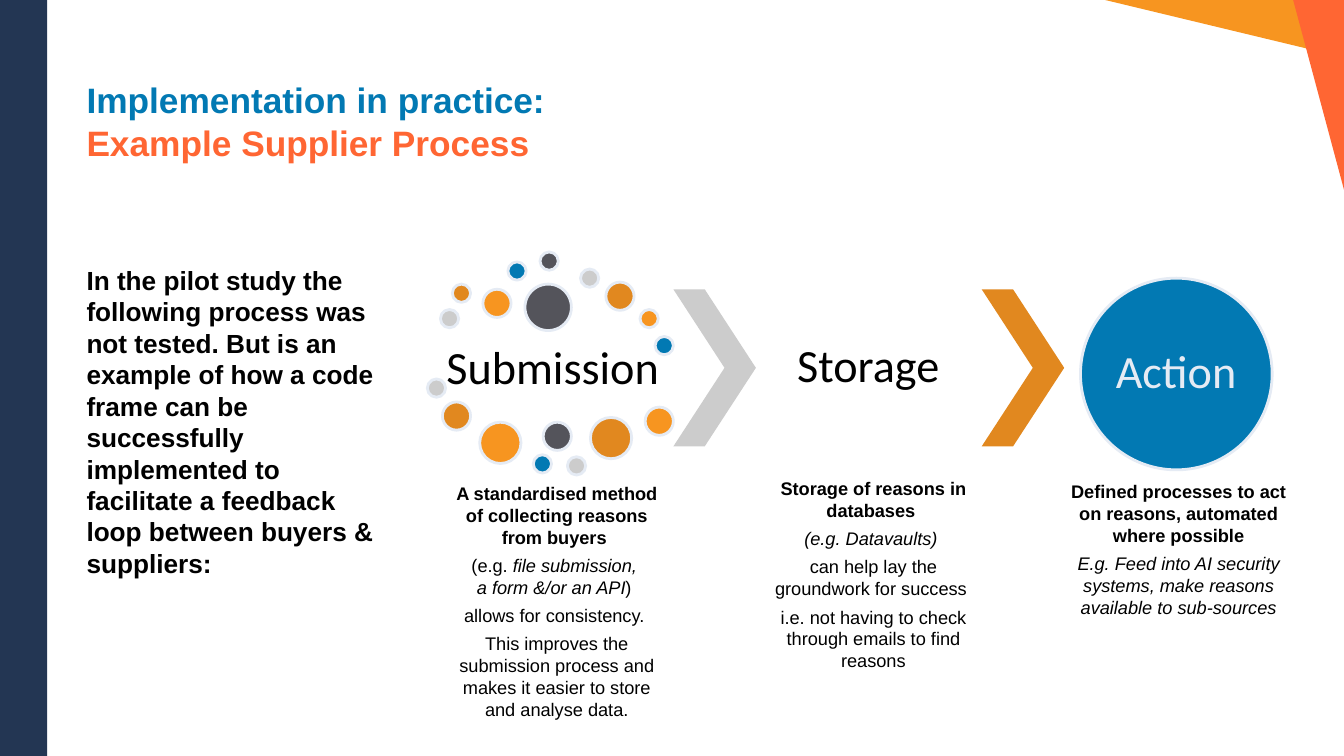
"""Build the example supplier process slide."""
from dataclasses import dataclass
from itertools import cycle

import pptx
import pptx.dml.color
import pptx.enum.shapes
import pptx.enum.text
import pptx.oxml
import pptx.oxml.ns
import pptx.shapes.autoshape
import pptx.slide
import pptx.text.text
import pptx.util

Preset = pptx.enum.shapes.MSO_SHAPE
Align = pptx.enum.text.PP_ALIGN
Anchor = pptx.enum.text.MSO_ANCHOR
Cm = pptx.util.Cm
Pt = pptx.util.Pt


@dataclass(frozen=True)
class Theme:
    navy: str = "233653"
    blue: str = "0279B3"
    coral: str = "FF6633"
    orange: str = "F79520"
    amber: str = "E1881F"
    grey: str = "CCCCCC"
    dark: str = "54545B"
    pale: str = "E5EBF4"
    black: str = "000000"
    text_font: str = "Arial"
    stage_font: str = "Calibri"
    title_size: float = 25.2
    body_size: float = 18.7
    stage_size: float = 33
    detail_size: float = 13
    detail_gap: float = 4.55
    outline: float = 2


THEME = Theme()


@dataclass(frozen=True)
class Frame:
    left: float
    top: float
    width: float
    height: float


@dataclass(frozen=True)
class Figure:
    preset: Preset
    frame: Frame
    fill: str
    outlined: bool = False
    rotation: float = 0
    adjustment: float | None = None


@dataclass(frozen=True)
class Span:
    text: str
    bold: bool = False
    italic: bool = False


@dataclass(frozen=True)
class Stage:
    name: str
    name_frame: Frame
    name_colour: str
    name_inset: float
    detail_frame: Frame
    detail_bottom: float
    details: tuple[tuple[Span, ...], ...]


BACKDROP = (
    Figure(Preset.RIGHT_TRIANGLE, Frame(26.19, -1.37, 6.4, 3.48), THEME.orange, rotation=165),
    Figure(Preset.ISOSCELES_TRIANGLE, Frame(30.2, 0.2, 8.99, 3.15), THEME.coral, rotation=75),
    Figure(Preset.RECTANGLE, Frame(0, 0, 1.19, 19.05), THEME.navy),
)

SMALL, MEDIUM, LARGE, LARGEST = 0.46, 0.71, 1.04, 1.17
DOTS = (
    (11.1, 7.8, SMALL), (11.4, 7.16, SMALL), (12.17, 7.29, MEDIUM),
    (12.8, 6.6, SMALL), (13.61, 6.35, SMALL), (14.63, 6.78, SMALL),
    (15.27, 7.11, MEDIUM), (16.13, 7.8, SMALL), (16.51, 8.48, SMALL),
    (13.23, 7.16, LARGEST), (10.77, 9.55, SMALL), (11.15, 10.13, MEDIUM),
    (12.09, 10.64, LARGE), (13.44, 11.46, SMALL), (13.69, 10.64, MEDIUM),
    (14.3, 11.51, SMALL), (14.88, 10.52, LARGE), (16.26, 10.26, MEDIUM),
)
DOT_COLOURS = (THEME.grey, THEME.amber, THEME.orange, THEME.blue, THEME.dark)

PROCESS = tuple(
    Figure(Preset.OVAL, Frame(left, top, size, size), colour, outlined=True)
    for (left, top, size), colour in zip(DOTS, cycle(DOT_COLOURS))
) + (
    Figure(Preset.CHEVRON, Frame(16.97, 7.29, 2.08, 3.96), THEME.grey, adjustment=0.62),
    Figure(Preset.CHEVRON, Frame(24.74, 7.29, 2.08, 3.96), THEME.amber, adjustment=0.62),
    Figure(Preset.OVAL, Frame(27.23, 7.01, 4.83, 4.83), THEME.blue, outlined=True),
)

STAGES = (
    Stage("Submission", Frame(11.1, 8.36, 5.66, 1.88), THEME.black, 0.13,
          Frame(11.2, 13.39, 5.66, 3.51), 0.05, (
              (Span("A standardised method of collecting reasons from buyers ", bold=True),),
              (Span("(e.g. "), Span("file submission, ", italic=True), Span("\v"),
               Span("a form &/or an API", italic=True), Span(") ")),
              (Span("allows for consistency. "),),
              (Span("This improves the submission process and makes it easier "
                    "to store and analyse data."),))),
    Stage("Storage", Frame(19.05, 7.29, 5.66, 3.96), THEME.black, 0.13,
          Frame(19.18, 13.06, 5.66, 3.51), 0.73, (
              (Span("Storage of reasons in databases ", bold=True),),
              (Span("(e.g. Datavaults) ", italic=True),),
              (Span("can help lay the groundwork for success "),),
              (Span("i.e. not having to check through emails to find reasons"),))),
    Stage("Action", Frame(27.94, 7.72, 3.4, 3.4), THEME.pale, 0,
          Frame(26.87, 13.11, 5.66, 3.51), 2.1, (
              (Span("Defined processes to act on reasons, automated where possible", bold=True),),
              (Span("E.g. Feed into AI security systems, make reasons available "
                    "to sub-sources", italic=True),))),
)


def rgb(colour: str) -> pptx.dml.color.RGBColor:
    """Turn a hex string into a colour."""
    return pptx.dml.color.RGBColor.from_string(colour)


def place(shape: pptx.shapes.autoshape.Shape, frame: Frame) -> None:
    """Move a shape to a frame."""
    shape.left, shape.top = Cm(frame.left), Cm(frame.top)
    shape.width, shape.height = Cm(frame.width), Cm(frame.height)


def set_frame(text_frame: pptx.text.text.TextFrame, anchor: Anchor, side: float,
              top: float, bottom: float) -> None:
    """Set wrapping, anchor and insets of a text frame."""
    text_frame.word_wrap = True
    text_frame.auto_size = pptx.enum.text.MSO_AUTO_SIZE.NONE
    text_frame.vertical_anchor = anchor
    text_frame.margin_left = text_frame.margin_right = Cm(side)
    text_frame.margin_top, text_frame.margin_bottom = Cm(top), Cm(bottom)


def style(run: pptx.text.text._Run, name: str, size: float, colour: str,
          bold: bool = False, italic: bool = False) -> None:
    """Format one run."""
    run.font.name, run.font.size = name, Pt(size)
    run.font.bold, run.font.italic = bold, italic
    run.font.color.rgb = rgb(colour)


def draw_figure(page: pptx.slide.Slide, figure: Figure) -> None:
    """Draw a filled preset shape."""
    shape = page.shapes.add_shape(figure.preset, 0, 0, 0, 0)
    place(shape, figure.frame)
    shape.rotation = figure.rotation
    shape.shadow.inherit = False
    shape.fill.solid()
    shape.fill.fore_color.rgb = rgb(figure.fill)
    if figure.adjustment is not None:
        shape.adjustments[0] = figure.adjustment
    if figure.outlined:
        shape.line.color.rgb = rgb(THEME.pale)
        shape.line.width = Pt(THEME.outline)
    else:
        shape.line.fill.background()


def draw_stage(page: pptx.slide.Slide, stage: Stage) -> None:
    """Draw a stage name and the details below it."""
    box = page.shapes.add_textbox(0, 0, 0, 0)
    place(box, stage.name_frame)
    inset = stage.name_inset
    set_frame(box.text_frame, Anchor.MIDDLE, inset, inset, inset)
    box.text_frame.text = stage.name
    para = box.text_frame.paragraphs[0]
    para.alignment, para.line_spacing = Align.CENTER, 0.9
    style(para.runs[0], THEME.stage_font, THEME.stage_size, stage.name_colour)

    box = page.shapes.add_textbox(0, 0, 0, 0)
    place(box, stage.detail_frame)
    set_frame(box.text_frame, Anchor.MIDDLE, 0.05, 0.05, stage.detail_bottom)
    for index, spans in enumerate(stage.details):
        para = box.text_frame.add_paragraph() if index else box.text_frame.paragraphs[0]
        para.alignment, para.space_after = Align.CENTER, Pt(THEME.detail_gap)
        for span in spans:
            if span.text == "\v":
                para.add_line_break()
                continue
            run = para.add_run()
            run.text = span.text
            style(run, THEME.text_font, THEME.detail_size, THEME.black, span.bold, span.italic)


def fill_placeholders(page: pptx.slide.Slide) -> None:
    """Write the title and the introduction."""
    title, body = page.shapes.title, page.placeholders[1]
    place(title, Frame(2.18, 2.18, 17.04, 1.93))
    set_frame(title.text_frame, Anchor.BOTTOM, 0, 0, 0)
    title.text_frame.text = "Implementation in practice: \vExample Supplier Process"
    para = title.text_frame.paragraphs[0]
    para.alignment = Align.LEFT
    for run, colour in zip(para.runs, (THEME.blue, THEME.coral)):
        style(run, THEME.text_font, THEME.title_size, colour, bold=True)

    place(body, Frame(2.18, 6.53, 7.59, 11.63))
    set_frame(body.text_frame, Anchor.TOP, 0, 0.13, 0)
    body.text_frame.text = (
        "In the pilot study the following process was not tested. But is an example of how a "
        "code frame can be successfully implemented to facilitate a feedback loop between "
        "buyers & suppliers:")
    para = body.text_frame.paragraphs[0]
    properties = para._p.get_or_add_pPr()
    properties.set("marL", "0")
    properties.set("indent", "0")
    properties.append(pptx.oxml.parse_xml(f"<a:buNone {pptx.oxml.ns.nsdecls('a')}/>"))
    para.space_before, para.space_after = Pt(0), Pt(6)
    style(para.runs[0], THEME.text_font, THEME.body_size, THEME.black, bold=True)


def main() -> None:
    """Build and save the deck."""
    deck = pptx.Presentation()
    deck.slide_width, deck.slide_height = Cm(33.87), Cm(19.05)
    page = deck.slides.add_slide(deck.slide_layouts[1])
    fill_placeholders(page)
    for figure in BACKDROP + PROCESS:
        draw_figure(page, figure)
    for stage in STAGES:
        draw_stage(page, stage)
    deck.save("out.pptx")


if __name__ == "__main__":
    main()
